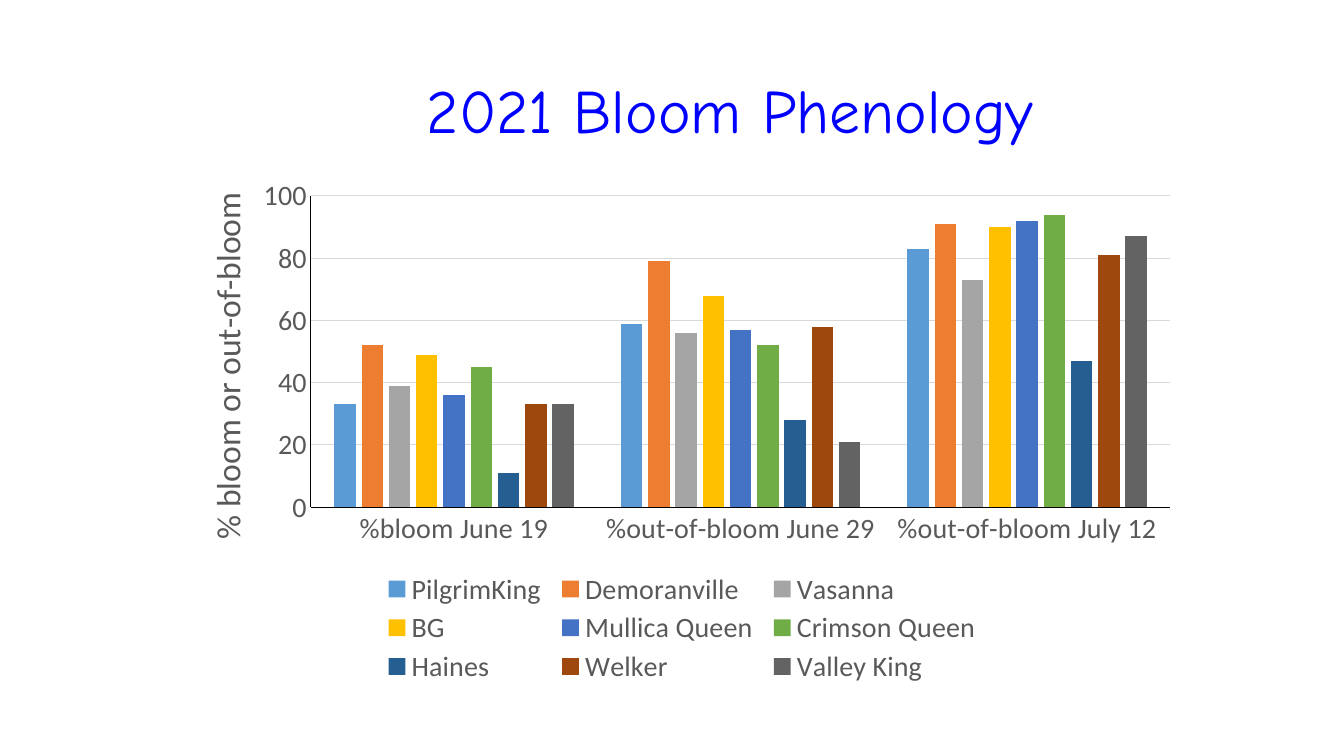
from lxml import etree
from pptx import Presentation
from pptx.chart.data import CategoryChartData
from pptx.dml.color import RGBColor
from pptx.enum.chart import XL_CHART_TYPE as ChartType
from pptx.enum.chart import XL_LEGEND_POSITION as LegendPosition
from pptx.enum.chart import XL_TICK_MARK as TickMark
from pptx.enum.text import MSO_ANCHOR as Anchor
from pptx.enum.text import PP_ALIGN as Align
from pptx.oxml.ns import qn
from pptx.util import Inches, Pt

COLORS = {"title": "0000FF", "text": "595959", "axis": "000000", "grid": "D9D9D9"}
CATEGORIES = ["%bloom June 19", "%out-of-bloom June 29", "%out-of-bloom July 12"]
VARIETIES = [
    ("PilgrimKing", (33, 59, 83), "5B9BD5"),
    ("Demoranville", (52, 79, 91), "ED7D31"),
    ("Vasanna", (39, 56, 73), "A5A5A5"),
    ("BG", (49, 68, 90), "FFC000"),
    ("Mullica Queen", (36, 57, 92), "4472C4"),
    ("Crimson Queen", (45, 52, 94), "70AD47"),
    ("Haines", (11, 28, 47), "255E91"),
    ("Welker", (33, 58, 81), "9E480E"),
    ("Valley King", (33, 21, 87), "636363"),
]


def style_font(font, name, size, color):
    font.name = name
    font.size = Pt(size)
    font.bold = False
    font.color.rgb = RGBColor.from_string(color)


def style_line(line, color):
    line.width = Pt(0.75)
    line.color.rgb = RGBColor.from_string(color)


def set_layout(element, index, **settings):
    """Place a chart part by fractions of the chart area."""
    for old in element.findall(qn("c:layout")):
        element.remove(old)
    layout = etree.Element(qn("c:layout"))
    manual = etree.SubElement(layout, qn("c:manualLayout"))
    for name, value in settings.items():
        etree.SubElement(manual, qn(f"c:{name}")).set("val", str(value))
    element.insert(index, layout)


def add_title(page, left, top, width, height):
    box = page.shapes.add_textbox(left, top, width, height)
    frame = box.text_frame
    frame.word_wrap = True
    frame.vertical_anchor = Anchor.MIDDLE
    para = frame.paragraphs[0]
    para.alignment = Align.CENTER
    para.line_spacing = 0.9
    span = para.add_run()
    span.text = "2021 Bloom Phenology"
    style_font(span.font, "Comic Neue", 44, COLORS["title"])


def style_axes(chart):
    for axis in (chart.category_axis, chart.value_axis):
        axis.major_tick_mark = axis.minor_tick_mark = TickMark.NONE
        style_font(axis.tick_labels.font, "Calibri", 20, COLORS["text"])
        style_line(axis.format.line, COLORS["axis"])
    values = chart.value_axis
    values.minimum_scale, values.maximum_scale, values.major_unit = 0, 100, 20
    values.has_major_gridlines = True
    style_line(values.major_gridlines.format.line, COLORS["grid"])
    values.has_title = True
    span = values.axis_title.text_frame.paragraphs[0].add_run()
    span.text = "% bloom or out-of-bloom"
    style_font(span.font, "Calibri", 24, COLORS["text"])


def add_bloom_chart(page, left, top, width, height):
    data = CategoryChartData()
    data.categories = CATEGORIES
    for name, values, _ in VARIETIES:
        data.add_series(name, values)
    chart = page.shapes.add_chart(
        ChartType.COLUMN_CLUSTERED, left, top, width, height, data
    ).chart
    style_font(chart.font, "Calibri", 10, COLORS["axis"])
    chart.has_title = False

    plot = chart.plots[0]
    plot.vary_by_categories = False
    plot.gap_width = 219
    plot.overlap = -27
    for series, (_, _, color) in zip(plot.series, VARIETIES):
        series.format.fill.solid()
        series.format.fill.fore_color.rgb = RGBColor.from_string(color)
    style_axes(chart)

    chart.has_legend = True
    chart.legend.position = LegendPosition.BOTTOM
    chart.legend.include_in_layout = False
    style_font(chart.legend.font, "Calibri", 20, COLORS["text"])

    root = chart.element
    edges = {"xMode": "edge", "yMode": "edge"}
    set_layout(root.find(".//" + qn("c:plotArea")), 0, layoutTarget="inner",
               **edges, x=0.135, y=0.053, w=0.845, h=0.596)
    set_layout(root.find(".//" + qn("c:legend")), 1,
               **edges, x=0.2, y=0.765, w=0.6, h=0.23)
    set_layout(root.find(".//" + qn("c:valAx") + "/" + qn("c:title")), 1,
               **edges, x=0.025, y=0.035)


def main():
    deck = Presentation()
    deck.slide_width, deck.slide_height = Inches(13.33), Inches(7.5)
    page = deck.slides.add_slide(deck.slide_layouts[6])
    add_title(page, Inches(3.05), Inches(0.4), Inches(8.39), Inches(1.45))
    add_bloom_chart(page, Inches(1.72), Inches(1.67), Inches(10.09), Inches(5.18))
    deck.save("out.pptx")


if __name__ == "__main__":
    main()
